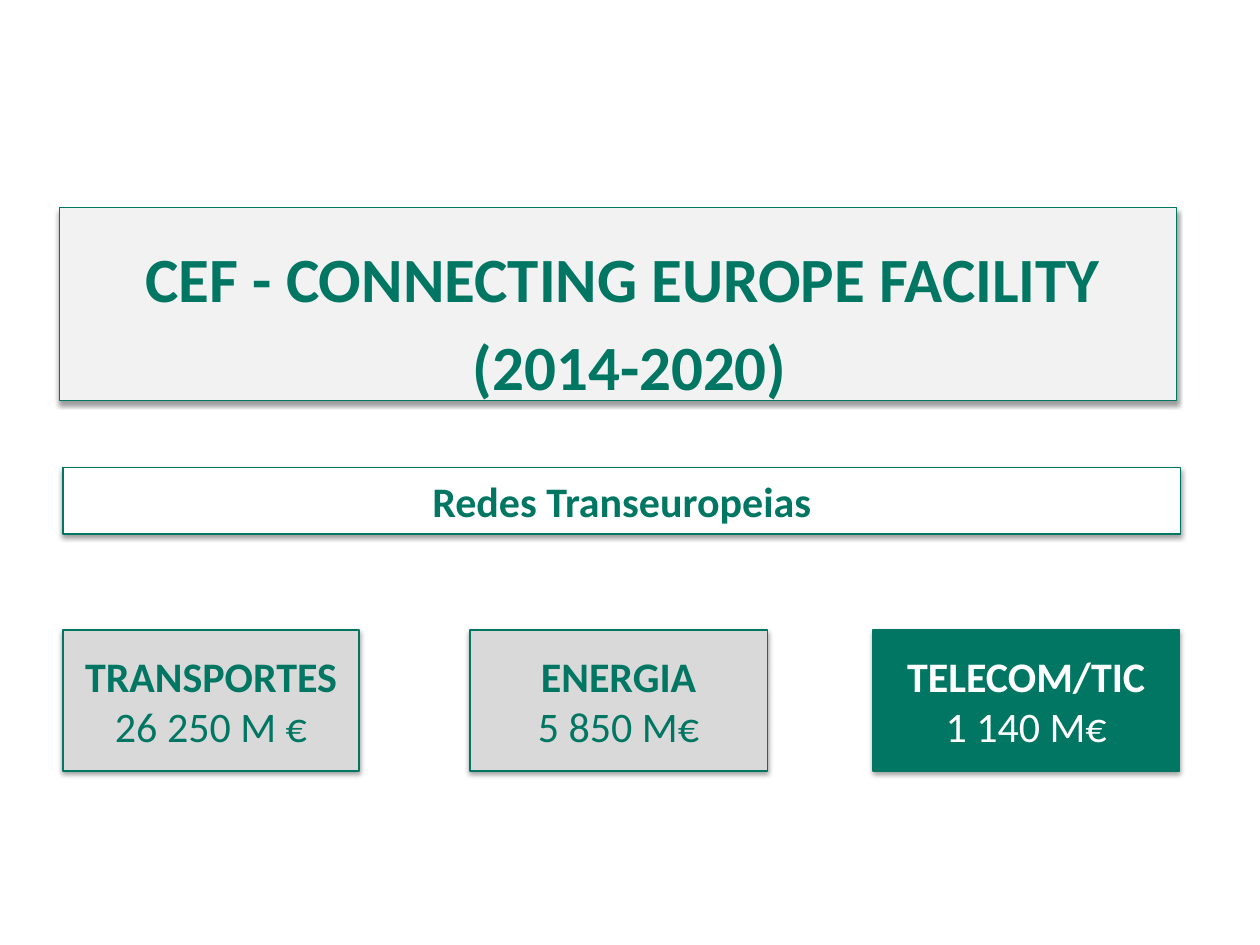
from dataclasses import dataclass

from lxml import etree
from pptx import Presentation
from pptx import util as u
from pptx.dml.color import RGBColor
from pptx.enum import shapes, text
from pptx.oxml.ns import qn

# The slide is a grid of 100 columns by 75 rows
COLUMNS, ROWS = 100, 75
WIDTH, HEIGHT = u.Inches(10), u.Inches(7.5)


@dataclass(frozen=True)
class Theme:
    font: str = "Calibri"
    green: str = "007663"
    white: str = "FFFFFF"
    pale: str = "F2F2F2"
    grey: str = "D9D9D9"
    shadow: str = "000000"
    title: int = 36
    body: int = 24
    outline: float = 0.75


THEME = Theme()


def place(box):
    """Turn (column, row, columns, rows) into slide lengths."""
    col, row, cols, rows = box
    return (int(WIDTH * col / COLUMNS), int(HEIGHT * row / ROWS),
            int(WIDTH * cols / COLUMNS), int(HEIGHT * rows / ROWS))


def add_shadow(panel):
    panel.shadow.inherit = False
    effects = panel._element.spPr.find(qn("a:effectLst"))
    outer = etree.SubElement(effects, qn("a:outerShdw"), blurRad=str(u.Pt(3.1)),
                             dist=str(u.Pt(1.6)), dir="5400000", rotWithShape="0")
    color = etree.SubElement(outer, qn("a:srgbClr"), val=THEME.shadow)
    etree.SubElement(color, qn("a:alpha"), val="38000")


def add_panel(slide, box, fill):
    panel = slide.shapes.add_shape(shapes.MSO_SHAPE.RECTANGLE, *place(box))
    panel.fill.solid()
    panel.fill.fore_color.rgb = RGBColor.from_string(fill)
    panel.line.color.rgb = RGBColor.from_string(THEME.green)
    panel.line.width = u.Pt(THEME.outline)
    add_shadow(panel)
    return panel


def write(frame, lines, size, color, gap=0):
    """Write centred (wording, bold) lines, with a gap between them."""
    frame.word_wrap = True
    for i, (wording, bold) in enumerate(lines):
        line = frame.paragraphs[0] if i == 0 else frame.add_paragraph()
        line.text = wording
        line.alignment = text.PP_ALIGN.CENTER
        if i and gap:
            line.space_before = u.Pt(gap)
        line.font.name = THEME.font
        line.font.size = u.Pt(size)
        line.font.bold = bold
        line.font.color.rgb = RGBColor.from_string(color)


def title_region(slide, box):
    add_panel(slide, box, THEME.pale)
    # The heading is centred on the slide, just right of the panel's centre
    row, rows = box[1], box[3]
    heading = slide.shapes.add_textbox(*place((5, row + 2, 90, rows - 2)))
    write(heading.text_frame,
          [("CEF - CONNECTING EUROPE FACILITY ", True), ("(2014-2020)", True)],
          THEME.title, THEME.green, gap=7.2)


def text_panel(slide, box, lines, fill, color):
    frame = add_panel(slide, box, fill).text_frame
    frame.vertical_anchor = text.MSO_ANCHOR.MIDDLE
    write(frame, lines, THEME.body, color)


def sectors_region(slide, box):
    left, row, _, rows = box
    sectors = [
        ("TRANSPORTES", "26 250 M €", 0, 23.5, THEME.grey, THEME.green),
        ("ENERGIA", "5 850 M€", 32.3, 23.6, THEME.grey, THEME.green),
        ("TELECOM/TIC", "1 140 M€", 64.3, 24.3, THEME.green, THEME.white),
    ]
    for sector, budget, offset, cols, fill, color in sectors:
        text_panel(slide, (left + offset, row, cols, rows),
                   [(sector, True), (budget, False)], fill, color)


def main():
    deck = Presentation()
    deck.slide_width, deck.slide_height = WIDTH, HEIGHT
    slide = deck.slides.add_slide(deck.slide_layouts[6])

    title_region(slide, (4.7, 16.5, 88.7, 15.3))
    sectors_region(slide, (5, 50, 88.6, 11.2))
    # Networks band
    text_panel(slide, (5, 37.1, 88.7, 5.3), [("Redes Transeuropeias", True)],
               THEME.white, THEME.green)

    deck.save("out.pptx")


if __name__ == "__main__":
    main()
